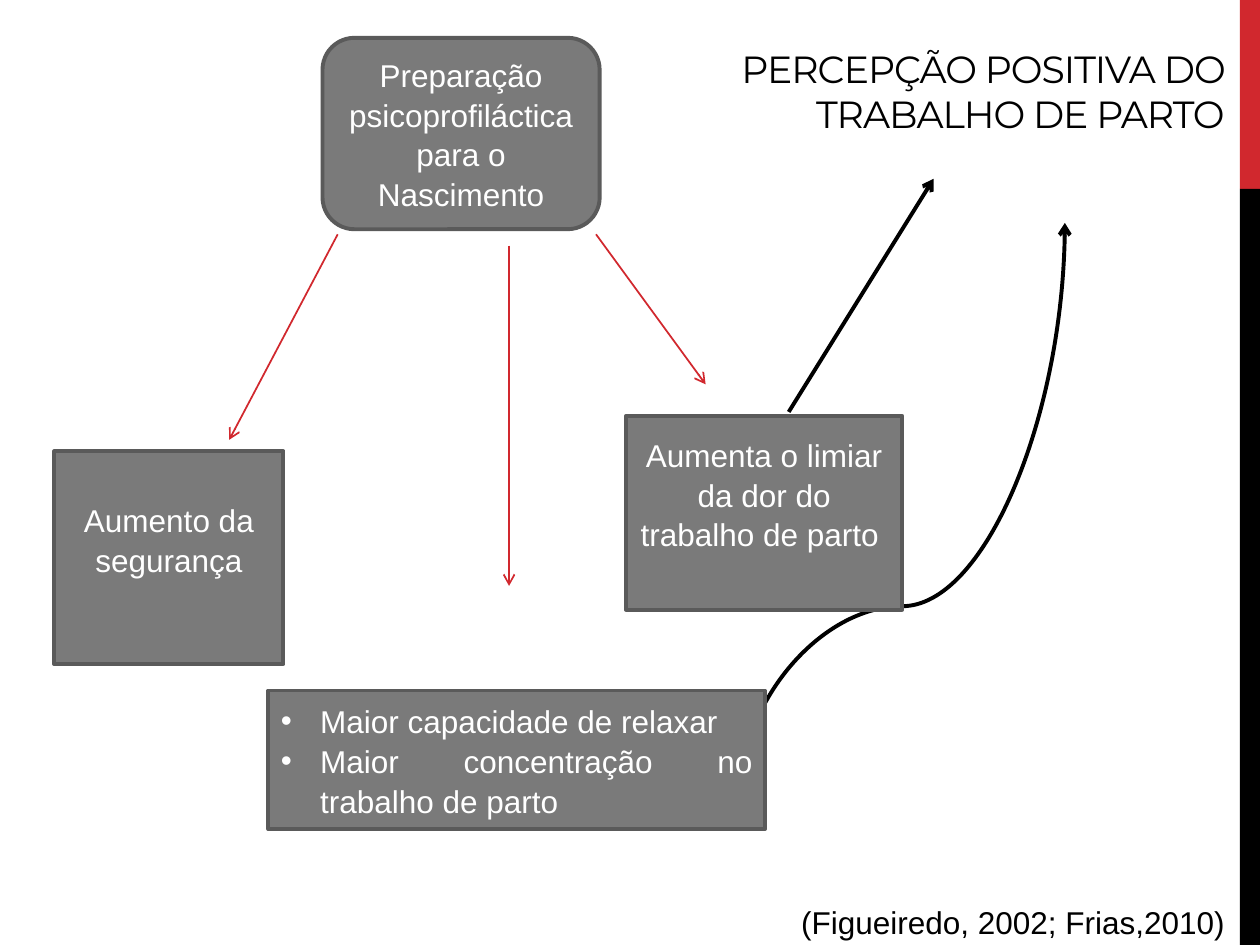
from lxml import etree
from pptx import Presentation
from pptx.dml.color import RGBColor
from pptx.enum.shapes import MSO_CONNECTOR, MSO_SHAPE
from pptx.enum.text import MSO_ANCHOR, MSO_AUTO_SIZE, PP_ALIGN
from pptx.oxml.ns import qn
from pptx.util import Pt

RECT, ROUNDED = MSO_SHAPE.RECTANGLE, MSO_SHAPE.ROUNDED_RECTANGLE
STRAIGHT, CURVE = MSO_CONNECTOR.STRAIGHT, MSO_CONNECTOR.CURVE
CENTER, RIGHT, JUSTIFY = PP_ALIGN.CENTER, PP_ALIGN.RIGHT, PP_ALIGN.JUSTIFY
MIDDLE, BOTTOM = MSO_ANCHOR.MIDDLE, MSO_ANCHOR.BOTTOM
NO_FIT = MSO_AUTO_SIZE.NONE

RED = RGBColor(0xD1, 0x28, 0x2E)
BLACK = RGBColor(0x00, 0x00, 0x00)
WHITE = RGBColor(0xFF, 0xFF, 0xFF)
GRAY = RGBColor(0x7A, 0x7A, 0x7A)
DARK_GRAY = RGBColor(0x5A, 0x5A, 0x5A)

LINE_HEIGHT = 21.7
BULLET_INDENT = 22.5


def add_box(s, box, fill, kind=RECT):
    sp = s.shapes.add_shape(kind, *map(Pt, box))
    sp.shadow.inherit = False
    sp.fill.solid()
    sp.fill.fore_color.rgb = fill
    return sp


def style_paragraph(p, color, align=None):
    p.alignment = align
    p.line_spacing = 1.05
    p.font.size = Pt(18)
    p.font.name = "Arial"
    p.font.color.rgb = color


def add_bullet(p):
    pPr = p._p.get_or_add_pPr()
    pPr.set("marL", str(Pt(BULLET_INDENT)))
    pPr.set("indent", str(-Pt(BULLET_INDENT)))
    font = etree.Element(qn("a:buFont"), typeface="Arial")
    char = etree.Element(qn("a:buChar"), char="•")
    pPr.find(qn("a:lnSpc")).addnext(font)
    font.addnext(char)


def add_concept(s, box, lines, kind=RECT, bulleted=False, lift=0):
    sp = add_box(s, box, GRAY, kind)
    sp.line.color.rgb = DARK_GRAY
    sp.line.width = Pt(2.25)
    tf = sp.text_frame
    tf.word_wrap = True
    tf.vertical_anchor = MIDDLE
    tf.margin_bottom = Pt(3.6 + lift)
    tf.text = "\n".join(lines)
    for p in tf.paragraphs:
        style_paragraph(p, WHITE, JUSTIFY if bulleted else CENTER)
        if bulleted:
            add_bullet(p)


def add_arrow(s, start, end, color, width, kind=STRAIGHT):
    cxn = s.shapes.add_connector(kind, *map(Pt, start + end))
    cxn.line.color.rgb = color
    cxn.line.width = Pt(width)
    etree.SubElement(cxn.line._get_or_add_ln(), qn("a:tailEnd"), type="arrow")
    etree.SubElement(cxn._element.spPr, qn("a:effectLst"))
    return cxn


def add_curved_arrow(s, box):
    x, y, w, h = box
    cxn = add_arrow(s, (x + w, y + h), (x, y), BLACK, 2.25, CURVE)
    spPr = cxn._element.spPr
    spPr.find(qn("a:xfrm")).set("rot", str(90 * 60000))
    geom = spPr.find(qn("a:prstGeom"))
    guides = geom.find(qn("a:avLst"))
    if guides is None:
        guides = etree.SubElement(geom, qn("a:avLst"))
    etree.SubElement(guides, qn("a:gd"), name="adj1", fmla="val 33300")


def add_side_bar(s, box):
    x, y, w, h = box
    red_height = h / 5
    for top, height, color in ((y, red_height, RED),
                               (y + red_height, h - red_height, BLACK)):
        add_box(s, (x, top, w, height), color).line.fill.background()


def add_title(s, box):
    sp = s.shapes.title
    sp.left, sp.top, sp.width, sp.height = map(Pt, box)
    tf = sp.text_frame
    tf.text = "PERCEPÇÃO POSITIVA DO TRABALHO DE PARTO"
    tf.word_wrap = True
    tf.auto_size = NO_FIT
    tf.vertical_anchor = BOTTOM
    p = tf.paragraphs[0]
    p.alignment = RIGHT
    p.font.size = Pt(21.6)
    p.font.name = "Montserrat"
    p.font.color.rgb = BLACK
    p.runs[0].font._element.set("spc", "-60")


def add_citation(s, box):
    tf = s.shapes.add_textbox(*map(Pt, box)).text_frame
    tf.word_wrap = False
    tf.text = "(Figueiredo, 2002; Frias,2010)"
    style_paragraph(tf.paragraphs[0], BLACK)


def add_diagram(s):
    add_arrow(s, (450.7, 235.4), (533.5, 102.2), BLACK, 2.25)
    add_curved_arrow(s, (351.4, 198.7, 328.3, 185.8))
    for start, end in (((340.6, 133.9), (403.2, 219.6)),
                       ((290.9, 140.4), (290.9, 334.8)),
                       ((193, 133.9), (131, 251.3))):
        add_arrow(s, start, end, RED, 1)
    add_concept(s, (31, 257.8, 131, 121.7), ["Aumento da segurança"],
                lift=LINE_HEIGHT)
    add_concept(s, (184.3, 21.6, 158.4, 109.4),
                ["Preparação psicoprofiláctica para o Nascimento"], ROUNDED)
    add_concept(s, (153.4, 394.6, 283.7, 79.2),
                ["Maior capacidade de relaxar",
                 "Maior concentração no trabalho de parto"], bulleted=True)
    add_concept(s, (357.8, 237.6, 157.7, 110.9),
                ["Aumenta o limiar da dor do trabalho de parto "],
                lift=LINE_HEIGHT)


def main():
    prs = Presentation()
    prs.slide_width, prs.slide_height = Pt(720), Pt(540)
    s = prs.slides.add_slide(prs.slide_layouts[5])
    add_side_bar(s, (708.5, 0, 11.5, 540))
    add_title(s, (303.1, 25.9, 403.9, 55.4))
    add_diagram(s)
    add_citation(s, (450.7, 511.2, 259.2, 28.8))
    prs.save("out.pptx")


if __name__ == "__main__":
    main()
